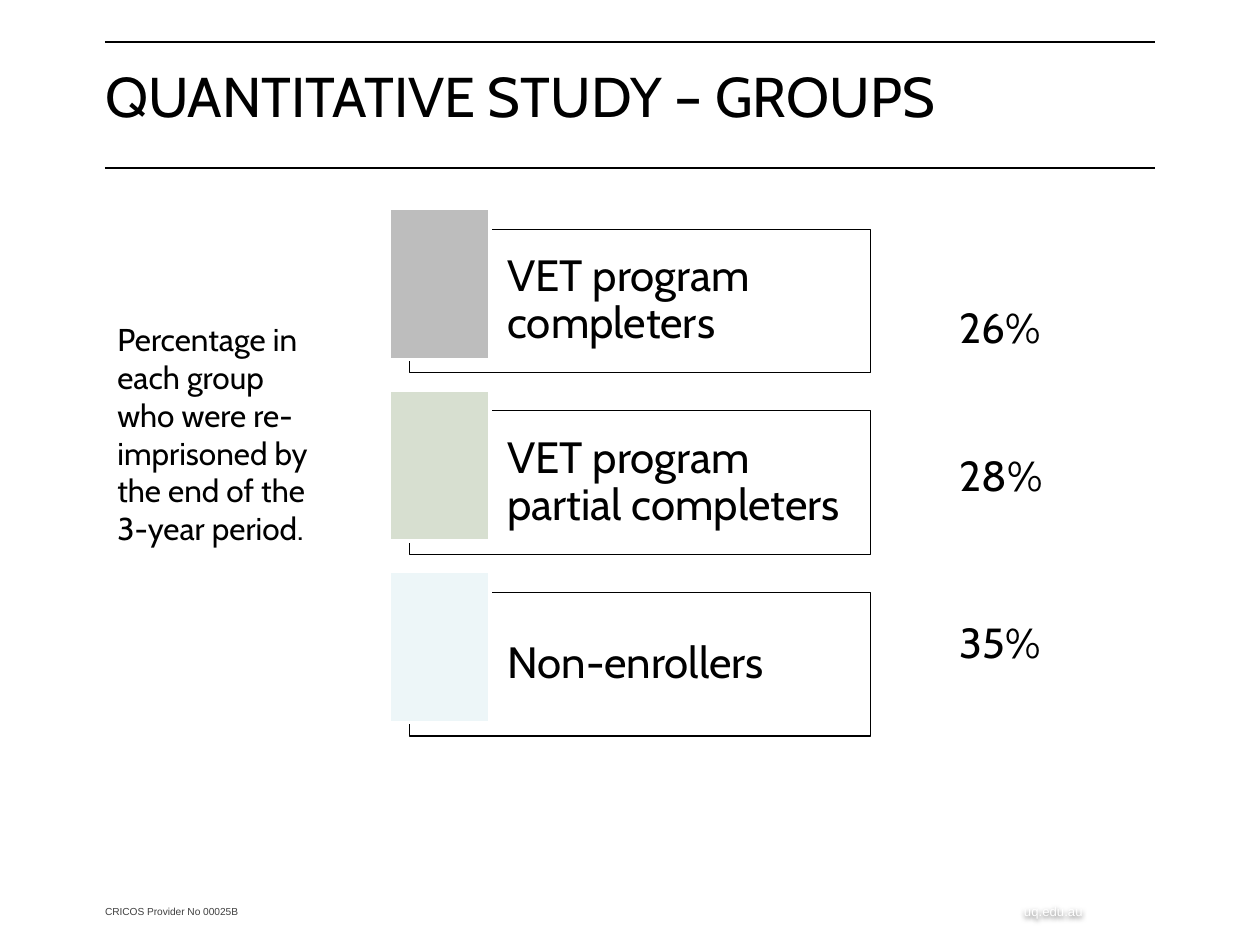
from lxml import etree
from pptx import Presentation
from pptx.dml import color
from pptx.enum import shapes, text
from pptx.oxml import ns
from pptx.util import Pt

COLOURS = {
    "black": "000000",
    "white": "FFFFFF",
    "footer": "404040",
    "completers": "BDBDBD",
    "partial": "D7DFD0",
    "non_enrollers": "EDF6F8",
}
GROUPS = [
    ("VET program completers", "completers", "26%", 168.5),
    ("VET program partial completers", "partial", "28%", 253.5),
    ("Non-enrollers", "non_enrollers", "35%", 348.5),
]
CARD_TOP, CARD_STEP = 131, 103.75


def rgb(name):
    return color.RGBColor.from_string(COLOURS[name])


def write(frame, words, size=18, font="Cabin", colour="black", spacing=None,
          anchor=text.MSO_ANCHOR.TOP, insets=(7.2, 3.6, 7.2, 3.6), raised=False):
    frame.word_wrap = True
    frame.vertical_anchor = anchor
    (frame.margin_left, frame.margin_top,
     frame.margin_right, frame.margin_bottom) = map(Pt, insets)
    para = frame.paragraphs[0]
    para.alignment = text.PP_ALIGN.LEFT
    if spacing is not None:
        para.line_spacing = spacing
    span = para.add_run()
    span.text = words
    span.font.name = font
    span.font.size = Pt(size)
    span.font.color.rgb = rgb(colour)
    if raised:
        span.font._element.set("baseline", "30000")


class SlideBuilder:
    def __init__(self, page):
        self.page = page

    def rule(self, left, right, top):
        line = self.page.shapes.add_connector(
            shapes.MSO_CONNECTOR.STRAIGHT, Pt(left), Pt(top), Pt(right), Pt(top))
        line.line.color.rgb = rgb("black")
        line.line.width = Pt(1.25)
        etree.SubElement(line._element.spPr, ns.qn("a:effectLst"))

    def label(self, left, top, width, height, words, **style):
        box = self.page.shapes.add_textbox(*map(Pt, (left, top, width, height)))
        write(box.text_frame, words, **style)
        return box

    def glow_label(self, *place, **style):
        box = self.label(*place, **style)
        effects = etree.SubElement(box._element.spPr, ns.qn("a:effectLst"))
        shadow = etree.SubElement(effects, ns.qn("a:outerShdw"),
                                  blurRad=str(Pt(3)), dist=str(Pt(1)), dir="5400000")
        tint = etree.SubElement(shadow, ns.qn("a:srgbClr"), val=COLOURS["black"])
        etree.SubElement(tint, ns.qn("a:alpha"), val="60000")

    def block(self, left, top, width, height, fill, line, weight, opacity=100):
        box = self.page.shapes.add_shape(
            shapes.MSO_SHAPE.RECTANGLE, *map(Pt, (left, top, width, height)))
        box.shadow.inherit = False
        box.fill.solid()
        box.fill.fore_color.rgb = rgb(fill)
        box.line.color.rgb = rgb(line)
        box.line.width = Pt(weight)
        if opacity < 100:
            tint = box._element.spPr.find(ns.qn("a:solidFill"))[0]
            etree.SubElement(tint, ns.qn("a:alpha"), val=str(opacity * 1000))
        return box

    def group_card(self, top, words, colour):
        card = self.block(234, top, 263.5, 82, "white", "black", 0.75, opacity=40)
        write(card.text_frame, words, size=25, spacing=0.9,
              anchor=text.MSO_ANCHOR.MIDDLE, insets=(56, 7.2, 7.2, 7.2))
        self.block(222.5, top - 12, 57.5, 86.5, colour, "white", 2)


def main():
    deck = Presentation()
    deck.slide_width, deck.slide_height = Pt(720), Pt(540)
    builder = SlideBuilder(deck.slides.add_slide(deck.slide_layouts[6]))

    builder.label(60, 516, 300, 8, "CRICOS Provider No 00025B", size=10, font="Arial",
                  colour="footer", insets=(0, 0, 0, 0), raised=True)
    builder.glow_label(578, 511, 142, 18, "uq.edu.au", size=13, font="Arial",
                       colour="white", raised=True)
    for top in (24, 96):
        builder.rule(60, 660, top)
    builder.label(60, 24, 600, 72, "QUANTITATIVE STUDY – GROUPS", size=32,
                  spacing=Pt(27.5), anchor=text.MSO_ANCHOR.MIDDLE, insets=(0, 0, 0, 0))
    builder.label(60, 179.5, 129.5, 138,
                  "Percentage in each group who were re-imprisoned "
                  "by the end of the 3-year period.")
    for index, (words, colour, share, share_top) in enumerate(GROUPS):
        builder.group_card(CARD_TOP + index * CARD_STEP, words, colour)
        builder.label(541.5, share_top, 69, 36, share, size=24)

    deck.save("out.pptx")


if __name__ == "__main__":
    main()
